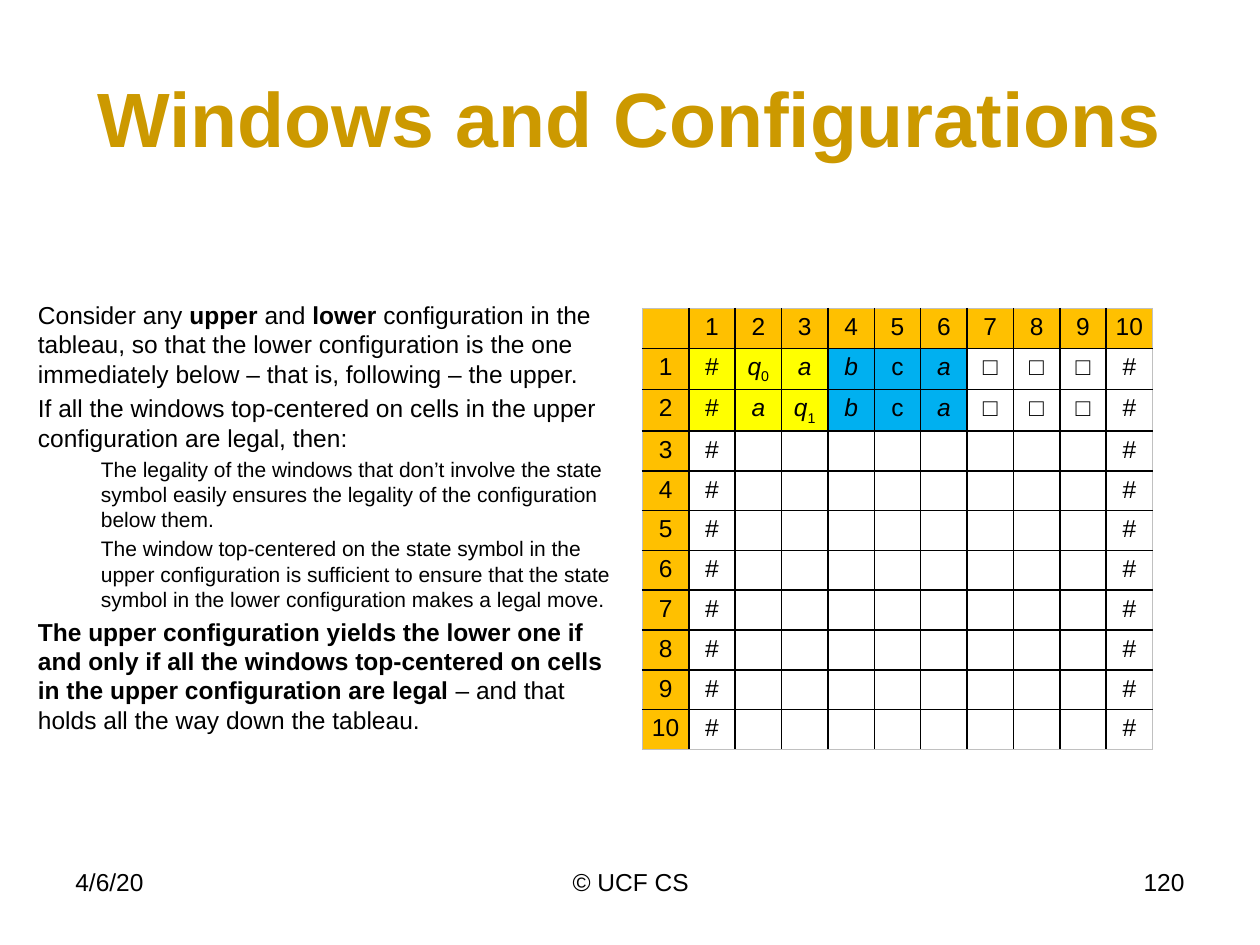
"""Build the slide on windows and configurations of a tableau."""
from lxml import etree
from pptx import Presentation
from pptx.dml.color import RGBColor
from pptx.enum.text import MSO_ANCHOR, MSO_AUTO_SIZE, PP_ALIGN
from pptx.oxml.ns import qn
from pptx.util import Cm, Pt

LEFT, CENTER, RIGHT = PP_ALIGN.LEFT, PP_ALIGN.CENTER, PP_ALIGN.RIGHT
MIDDLE, TOP = MSO_ANCHOR.MIDDLE, MSO_ANCHOR.TOP
NO_AUTOFIT = MSO_AUTO_SIZE.NONE
BLACK = RGBColor(0x00, 0x00, 0x00)
GRAY = RGBColor(0xC0, 0xC0, 0xC0)
GOLD = RGBColor(0xCC, 0x99, 0x00)
ORANGE = RGBColor(0xFF, 0xC0, 0x00)
YELLOW = RGBColor(0xFF, 0xFF, 0x00)
BLUE = RGBColor(0x00, 0xB0, 0xF0)
FONT = "Arial"
COUNT = 11


def write(paragraph, text, size=14, color=BLACK, bold=False, italic=False, subscript=False):
    run = paragraph.add_run()
    run.text = text
    font = run.font
    font.name, font.size, font.bold, font.italic = FONT, Pt(size), bold, italic
    font.color.rgb = color
    if subscript:
        run._r.get_or_add_rPr().set("baseline", "-25000")


def add_border(cell, side, color):
    line = etree.SubElement(cell._tc.get_or_add_tcPr(), qn(f"a:ln{side}"), w=str(Pt(1)))
    fill = etree.SubElement(line, qn("a:solidFill"))
    etree.SubElement(fill, qn("a:srgbClr"), val=str(color))


presentation = Presentation()
presentation.slide_width, presentation.slide_height = Cm(25.4), Cm(19.05)
slide = presentation.slides.add_slide(presentation.slide_layouts[1])

title, body = slide.placeholders
title.left, title.top, title.width, title.height = Cm(1.27), Cm(0.76), Cm(22.86), Cm(3.18)
title.text_frame.vertical_anchor = MIDDLE
title.text_frame.auto_size = NO_AUTOFIT
title_paragraph = title.text_frame.paragraphs[0]
title_paragraph.alignment = CENTER
write(title_paragraph, "Windows and Configurations", size=44, color=GOLD, bold=True)

body.left, body.top, body.width, body.height = Cm(0.51), Cm(5.92), Cm(12.14), Cm(11.86)
body.text_frame.auto_size = NO_AUTOFIT
body.text_frame.vertical_anchor = TOP
statements = [
    (0, [("Consider any ", False), ("upper ", True), ("and ", False), ("lower", True),
         (" configuration in the tableau, so that the lower configuration is the one "
          "immediately below – that is, following – the upper.", False)]),
    (0, [("If all the windows top-centered on cells in the upper configuration "
          "are legal, then:", False)]),
    (1, [("The legality of the windows that don’t involve the state symbol easily "
          "ensures the legality of the configuration below them.", False)]),
    (1, [("The window top-centered on the state symbol in the upper configuration is "
          "sufficient to ensure that the state symbol in the lower configuration "
          "makes a legal move.", False)]),
    (0, [("The upper configuration yields the lower one if and only if all the windows "
          "top-centered on cells in the upper configuration are legal", True),
         (" – and that holds all the way down the tableau.", False)]),
]
for index, (level, parts) in enumerate(statements):
    paragraph = body.text_frame.add_paragraph() if index else body.text_frame.paragraphs[0]
    size = 12 if level else 14
    paragraph.level = level
    paragraph.alignment = LEFT
    paragraph.line_spacing = Pt(size * 1.2)
    paragraph.space_before = Pt(size * 0.2 if index else 0)
    properties = paragraph._p.get_or_add_pPr()
    properties.set("marL", str(Cm(1.27 * level)))
    properties.set("indent", "0")
    etree.SubElement(properties, qn("a:buNone"))
    for text, bold in parts:
        write(paragraph, text, size=size, bold=bold)

tape = {1: ["#", "q0", "a", "b", "c", "a", "□", "□", "□", "#"],
        2: ["#", "a", "q1", "b", "c", "a", "□", "□", "□", "#"]}
empty_row = ["#"] + [""] * 8 + ["#"]
table = slide.shapes.add_table(COUNT, COUNT, Cm(12.95), Cm(6.22), Cm(10.29), Cm(8.6)).table
table.first_row = table.horz_banding = False
for row in range(COUNT):
    table.rows[row].height = Cm(0.83 if row in tape else 0.77)
    labels = [str(number) for number in range(1, COUNT)]
    texts = [str(row)] + tape.get(row, empty_row) if row else [""] + labels
    for column, text in enumerate(texts):
        cell = table.cell(row, column)
        cell.margin_left = cell.margin_right = Cm(0.18)
        cell.margin_top = cell.margin_bottom = Cm(0.1)
        edges = {"L": column == 0, "R": column == COUNT - 1,
                 "T": row == 0, "B": row == COUNT - 1}
        for side, is_outer in edges.items():
            add_border(cell, side, GRAY if is_outer else BLACK)
        if row == 0 or column == 0:
            color = ORANGE
        elif row in tape and column <= 6:
            color = YELLOW if column <= 3 else BLUE
        else:
            color = None
        if color:
            cell.fill.solid()
            cell.fill.fore_color.rgb = color
        else:
            cell.fill.background()
        paragraph = cell.text_frame.paragraphs[0]
        paragraph.alignment = CENTER
        if text.startswith("q"):
            write(paragraph, "q", italic=True)
            write(paragraph, text[1:], subscript=True)
        elif text:
            write(paragraph, text, italic=text in ("a", "b"))
        else:
            etree.SubElement(paragraph._p, qn("a:endParaRPr"), sz="1400")

footers = [("4/6/20", 1.27, 5.92, LEFT), ("© UCF CS", 8.69, 8.05, CENTER),
           ("120", 18.21, 5.92, RIGHT)]
for text, left, width, alignment in footers:
    text_box = slide.shapes.add_textbox(Cm(left), Cm(17.35), Cm(width), Cm(1.32))
    text_box.text_frame.word_wrap = True
    paragraph = text_box.text_frame.paragraphs[0]
    paragraph.alignment = alignment
    write(paragraph, text)

presentation.save("out.pptx")
